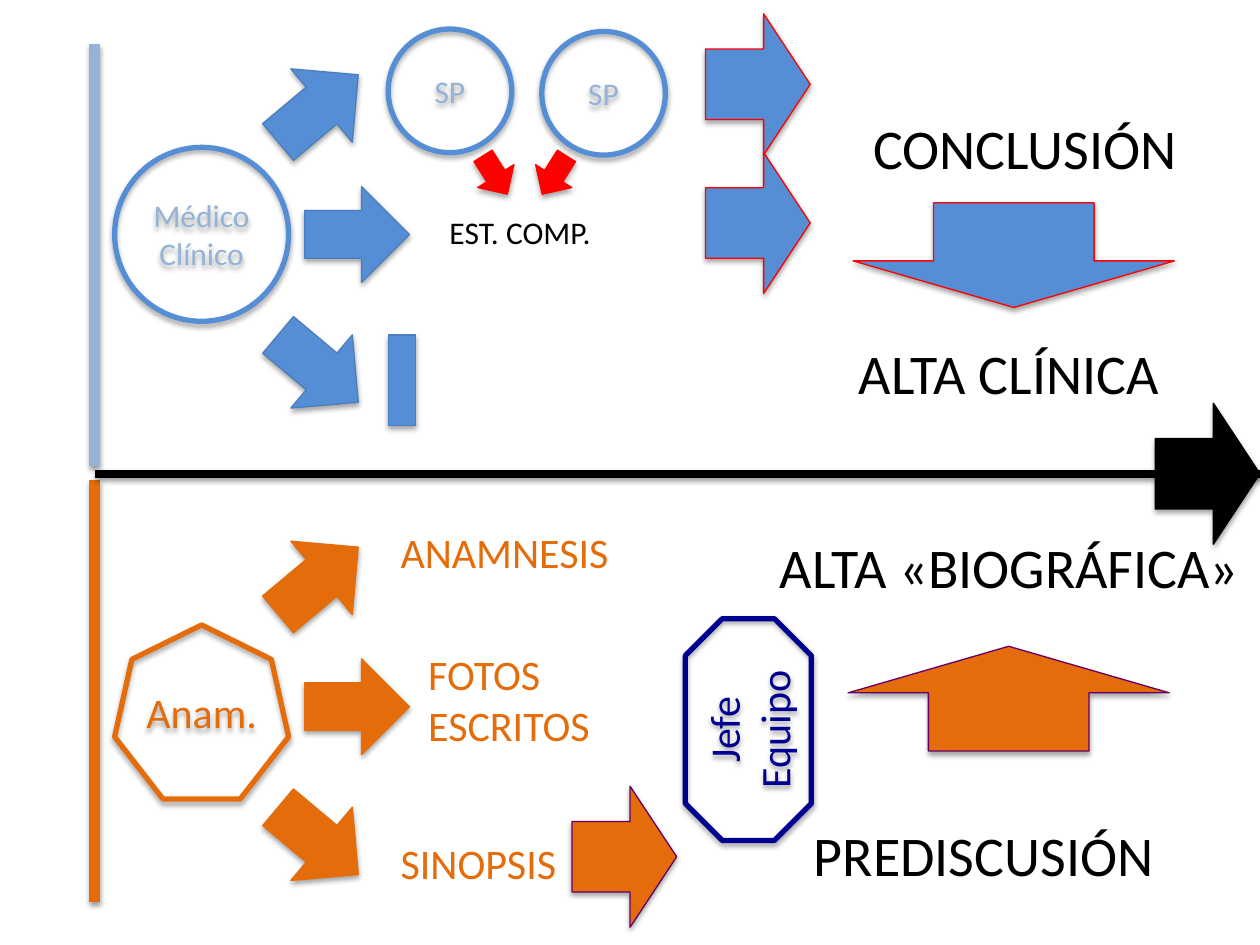
from dataclasses import dataclass

from lxml.etree import SubElement
from pptx import Presentation
from pptx.dml.color import RGBColor
from pptx.enum.shapes import MSO_CONNECTOR, MSO_SHAPE
from pptx.enum.text import MSO_ANCHOR, MSO_AUTO_SIZE, PP_ALIGN
from pptx.oxml.ns import qn
from pptx.util import Pt


@dataclass(frozen=True)
class Theme:
    font: str = "Calibri"
    blue: str = "558ED5"
    blue_edge: str = "4B7EBC"
    pale_blue: str = "95B3D7"
    orange: str = "E46C0A"
    red: str = "FF0000"
    purple: str = "660066"
    navy: str = "000090"
    black: str = "000000"
    small: int = 18
    medium: int = 24
    large: int = 32


THEME = Theme()
ARROW = (59.8, 54.7)
BIG_ARROW = (59.8, 80.6)
WIDE_ARROW = (59.8, 183.6)
BIG_HEAD = (0.5, 0.445)
ACTOR = 99.4


def rgb(value):
    return RGBColor.from_string(value)


def add_shadow(item, distance=1.8, opacity=35):
    """Soft shadow straight below; call it once the line is set."""
    effects = SubElement(item._element.spPr, qn("a:effectLst"))
    shadow = SubElement(effects, qn("a:outerShdw"), blurRad=str(Pt(3.1)),
                        dist=str(Pt(distance)), dir="5400000", rotWithShape="0")
    color = SubElement(shadow, qn("a:srgbClr"), val=THEME.black)
    SubElement(color, qn("a:alpha"), val=str(opacity * 1000))


def write(frame, lines, size, color, align):
    for index, line in enumerate(lines):
        paragraph = frame.add_paragraph() if index else frame.paragraphs[0]
        paragraph.alignment = align
        run = paragraph.add_run()
        run.text = line
        run.font.name = THEME.font
        run.font.size = Pt(size)
        run.font.color.rgb = rgb(color)


def add_solid(slide, kind, left, top, size, fill, edge, rotation=0, adjustments=()):
    solid = slide.shapes.add_shape(kind, Pt(left), Pt(top), *map(Pt, size))
    solid.fill.solid()
    solid.fill.fore_color.rgb = rgb(fill)
    solid.line.color.rgb = rgb(edge)
    solid.line.width = Pt(0.75)
    solid.rotation = rotation
    for index, value in enumerate(adjustments):
        solid.adjustments[index] = value
    add_shadow(solid)


def add_arrow(slide, left, top, size, fill, edge, rotation=0, adjustments=BIG_HEAD):
    add_solid(slide, MSO_SHAPE.RIGHT_ARROW, left, top, size, fill, edge,
              rotation, adjustments)


def add_outline(slide, kind, left, top, size, edge, text, text_size, color, rotation=0):
    outline = slide.shapes.add_shape(kind, Pt(left), Pt(top), *map(Pt, size))
    outline.fill.background()
    outline.line.color.rgb = rgb(edge)
    outline.line.width = Pt(3)
    outline.rotation = rotation
    add_shadow(outline)
    frame = outline.text_frame
    frame.word_wrap = True
    frame.vertical_anchor = MSO_ANCHOR.MIDDLE
    write(frame, [text], text_size, color, PP_ALIGN.CENTER)


def add_label(slide, left, top, width, height, lines, size, color):
    label = slide.shapes.add_textbox(Pt(left), Pt(top), Pt(width), Pt(height))
    frame = label.text_frame
    frame.word_wrap = False
    frame.auto_size = MSO_AUTO_SIZE.SHAPE_TO_FIT_TEXT
    write(frame, lines, size, color, PP_ALIGN.LEFT)


def add_heading(slide, left, top, width, text):
    add_label(slide, left, top, width, 46.1, [text], THEME.large, THEME.black)


def add_rule(slide, x1, y1, x2, y2, color, width):
    rule = slide.shapes.add_connector(MSO_CONNECTOR.STRAIGHT, Pt(x1), Pt(y1), Pt(x2), Pt(y2))
    rule.line.color.rgb = rgb(color)
    rule.line.width = Pt(width)
    add_shadow(rule, 1.6, 38)


def add_fan(slide, left, top, fill, edge):
    """Three arrows spreading out; left and top place the level one."""
    for dx, dy, rotation in ((0, 0, 0), (-22.3, 76.7, 40), (-22.3, -72, 320)):
        add_arrow(slide, left + dx, top + dy, ARROW, fill, edge, rotation, ())


def add_clinical_path(slide, left, top, height):
    add_rule(slide, left, top, left, top + height, THEME.pale_blue, 6)
    add_outline(slide, MSO_SHAPE.OVAL, left + 11.5, top + 59, (ACTOR, ACTOR), THEME.blue,
                "Médico Clínico", THEME.small, THEME.pale_blue)
    add_fan(slide, left + 120.2, top + 81.4, THEME.blue, THEME.blue_edge)
    add_solid(slide, MSO_SHAPE.RECTANGLE, left + 167.8, top + 166.3, (15.8, 51.8),
              THEME.blue, THEME.blue_edge)

    for dx, dy in ((167.8, -8.6), (255.6, -7.2)):
        add_outline(slide, MSO_SHAPE.OVAL, left + dx, top + dy, (70.6, 70.6), THEME.blue,
                    "SP", THEME.small, THEME.pale_blue)
    for dx, rotation in ((216, 57.7), (249.8, 122.3)):
        add_arrow(slide, left + dx, top + 62.6, (25.9, 24.5), THEME.red, THEME.red,
                  rotation, ())
    add_label(slide, left + 195.8, top + 92.9, 100.8, 28.8, ["EST. COMP."],
              THEME.small, THEME.black)

    for dy in (-17.3, 61.9):
        add_arrow(slide, left + 349.2, top + dy, BIG_ARROW, THEME.blue, THEME.red)
    add_heading(slide, left + 437.8, top + 36, 190.8, "CONCLUSIÓN")
    add_arrow(slide, left + 495.4, top + 28.8, WIDE_ARROW, THEME.blue, THEME.red, 90)
    add_heading(slide, left + 429.8, top + 164.9, 192.2, "ALTA CLÍNICA")


def add_biographical_path(slide, left, top, height):
    add_rule(slide, left, top, left, top + height, THEME.orange, 6)
    add_outline(slide, MSO_SHAPE.HEPTAGON, left + 11.5, top + 82.8, (ACTOR, ACTOR),
                THEME.orange, "Anam.", THEME.medium, THEME.orange)
    add_fan(slide, left + 120.2, top + 102.2, THEME.orange, THEME.orange)
    for dx, dy, width, label_height, lines in (
        (167.8, 23, 134.6, 36, ["ANAMNESIS"]),
        (183.6, 92.9, 108.7, 65.5, ["FOTOS", "ESCRITOS"]),
        (167.8, 200.9, 104.4, 36, ["SINOPSIS"]),
    ):
        add_label(slide, left + dx, top + dy, width, label_height, lines,
                  THEME.medium, THEME.orange)

    add_arrow(slide, left + 272.9, top + 175, BIG_ARROW, THEME.orange, THEME.purple)
    add_outline(slide, MSO_SHAPE.OCTAGON, left + 310.3, top + 106.6, (126.7, 72),
                THEME.navy, "Jefe Equipo", THEME.medium, THEME.navy, 270)
    add_heading(slide, left + 403.9, top + 190.8, 211, "PREDISCUSIÓN")
    add_arrow(slide, left + 492.5, top + 33.1, WIDE_ARROW, THEME.orange, THEME.purple, 270)
    add_heading(slide, left + 384.5, top + 26.6, 284.4, "ALTA «BIOGRÁFICA»")


def add_timeline(slide, left, middle, right):
    add_rule(slide, left, middle, right, middle, THEME.black, 4.5)
    width, height = BIG_ARROW
    add_arrow(slide, right - width, middle - height / 2, BIG_ARROW, THEME.black, THEME.black)


def main():
    presentation = Presentation()
    presentation.slide_width, presentation.slide_height = Pt(720), Pt(540)
    slide = presentation.slides.add_slide(presentation.slide_layouts[6])
    add_clinical_path(slide, 54, 25.2, 241.2)
    add_biographical_path(slide, 54, 274.3, 241.2)
    add_timeline(slide, 54, 270.7, 720)
    presentation.save("out.pptx")


if __name__ == "__main__":
    main()
